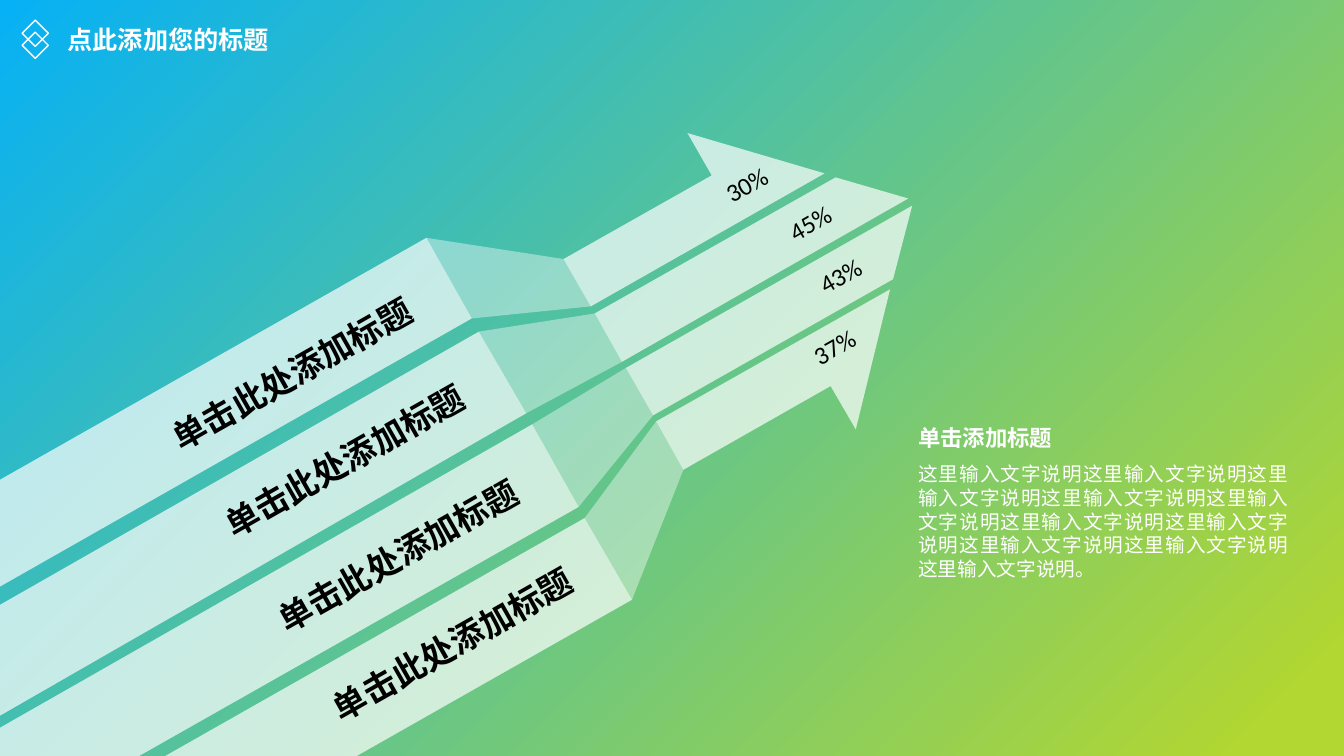
"""Build a slide with a four-lane folded arrow, lane labels and a description."""
from lxml.etree import SubElement
from pptx import Presentation
from pptx.dml.color import RGBColor
from pptx.enum.shapes import MSO_SHAPE as Preset
from pptx.enum.text import MSO_ANCHOR as Anchor, MSO_AUTO_SIZE as AutoSize, PP_ALIGN as Align
from pptx.oxml.ns import qn
from pptx.util import Cm, Pt

COLORS = {"blue": "06B1F5", "lime": "B2D632", "white": "FFFFFF", "black": "000000"}
CHINESE, LATIN = "Noto Sans CJK SC", "Calibri"
TILT = 330.4
CM_PER_INCH = 2.54

TITLE = "点此添加您的标题"
HEADING = "单击添加标题"
DESCRIPTION = "这里输入文字说明" * 10 + "。"
LABEL = "单击此处添加标题"
MARK_TOPS = (0.2, 0.32)

LANES = [
    {"band_edge": [(4.23, 2.36), (4.68, 3.16)], "tail": [(0, 5.82), (0, 4.76)],
     "head_edge": [(5.59, 2.57), (5.86, 3.04)],
     "tip": [(8.18, 1.72), (6.82, 1.32), (7.06, 1.74)],
     "label_at": (1.45, 3.4), "value": "30%", "value_at": (6.69, 1.63)},
    {"band_edge": [(4.75, 3.29), (5.22, 4.1)], "tail": [(0, 7.1), (0, 6)],
     "head_edge": [(5.9, 3.11), (6.17, 3.59)],
     "tip": [(9.01, 1.97), (8.29, 1.76)],
     "label_at": (1.97, 4.26), "value": "45%", "value_at": (7.32, 2.01)},
    {"band_edge": [(5.28, 4.21), (5.74, 5.03)], "tail": [(1.38, 7.5), (0, 7.5), (0, 7.22)],
     "head_edge": [(6.21, 3.65), (6.48, 4.12)],
     "tip": [(8.86, 2.77), (9.05, 2.04)],
     "label_at": (2.5, 5.2), "value": "43%", "value_at": (7.62, 2.53)},
    {"band_edge": [(5.8, 5.14), (6.27, 5.95)], "tail": [(3.54, 7.5), (1.64, 7.5)],
     "head_edge": [(6.51, 4.18), (6.78, 4.66)],
     "tip": [(8.24, 3.83), (8.49, 4.26), (8.83, 2.87)],
     "label_at": (3.04, 6.08), "value": "37%", "value_at": (7.56, 3.24)},
]


def color(name):
    return RGBColor.from_string(COLORS[name])


def lengths(*inches):
    return [Cm(value * CM_PER_INCH) for value in inches]


def write(shape, text, box, size, ink="white", font=CHINESE, bold=False,
          align=Align.LEFT, anchor=Anchor.MIDDLE, wrap=True, spacing=None, rotation=0):
    shape.left, shape.top, shape.width, shape.height = lengths(*box)
    shape.rotation = rotation
    frame = shape.text_frame
    frame.text = text
    frame.word_wrap = wrap
    frame.auto_size = AutoSize.NONE
    frame.vertical_anchor = anchor
    paragraph = frame.paragraphs[0]
    paragraph.alignment = align
    paragraph.space_before = Pt(0)
    if spacing:
        paragraph.line_spacing = Pt(spacing)
    run = paragraph.runs[0]
    run.font.size, run.font.bold, run.font.name = Pt(size), bold, font
    run.font.color.rgb = color(ink)
    SubElement(run.font._element, qn("a:ea"), typeface=font)
    return paragraph


def add_text(slide, text, box, size, **style):
    return write(slide.shapes.add_textbox(0, 0, 0, 0), text, box, size, **style)


def add_panel(slide, points, opacity):
    corners = [lengths(*point) for point in points]
    builder = slide.shapes.build_freeform(*corners[0], scale=1)
    builder.add_line_segments(corners[1:], close=True)
    shape = builder.convert_to_shape()
    shape.shadow.inherit = False
    shape.line.fill.background()
    shape.fill.solid()
    shape.fill.fore_color.rgb = color("white")
    tint = shape.fill._xPr.find(".//" + qn("a:srgbClr"))
    SubElement(tint, qn("a:alpha"), val=str(opacity * 1000))


def paint_background(slide):
    fill = slide.background.fill
    fill.gradient()
    fill.gradient_angle = 315
    for stop, name, position in zip(fill.gradient_stops, ("blue", "lime"), (0, 0.95)):
        stop.color.rgb = color(name)
        stop.position = position


def add_mark(slide):
    group = slide.shapes.add_group_shape()
    for top in MARK_TOPS:
        diamond = group.shapes.add_shape(Preset.DIAMOND, *lengths(0.22, top, 0.26, 0.26))
        diamond.shadow.inherit = False
        diamond.fill.background()
        diamond.line.color.rgb = color("white")
        diamond.line.width = Pt(1)


def main():
    presentation = Presentation()
    presentation.slide_width, presentation.slide_height = lengths(13.333, 7.5)
    slide = presentation.slides.add_slide(presentation.slide_layouts[1])
    paint_background(slide)
    write(slide.shapes.title, TITLE, (0.57, 0.19, 2.34, 0.4), 18, bold=True)
    add_mark(slide)

    for lane in LANES:
        band_edge, head_edge = lane["band_edge"], lane["head_edge"]
        add_panel(slide, band_edge + lane["tail"], 70)
        add_panel(slide, band_edge + head_edge[::-1], 40)
        add_panel(slide, head_edge + lane["tip"], 70)

    add_text(slide, HEADING, (9.01, 4.16, 1.55, 0.37), 16, bold=True, wrap=False)
    body = write(slide.placeholders[1], DESCRIPTION, (9.01, 4.53, 3.87, 1.28), 14,
                 align=Align.JUSTIFY, anchor=Anchor.TOP, spacing=17)
    properties = body._p.get_or_add_pPr()
    properties.set("marL", "0")
    properties.set("indent", "0")
    SubElement(properties, qn("a:buNone"))

    for lane in LANES:
        add_text(slide, LABEL, (*lane["label_at"], 3.08, 0.51), 24, ink="black",
                 bold=True, rotation=TILT)
        add_text(slide, lane["value"], (*lane["value_at"], 1.43, 0.4), 18, ink="black",
                 font=LATIN, align=Align.CENTER, rotation=TILT)

    presentation.save("out.pptx")


if __name__ == "__main__":
    main()
